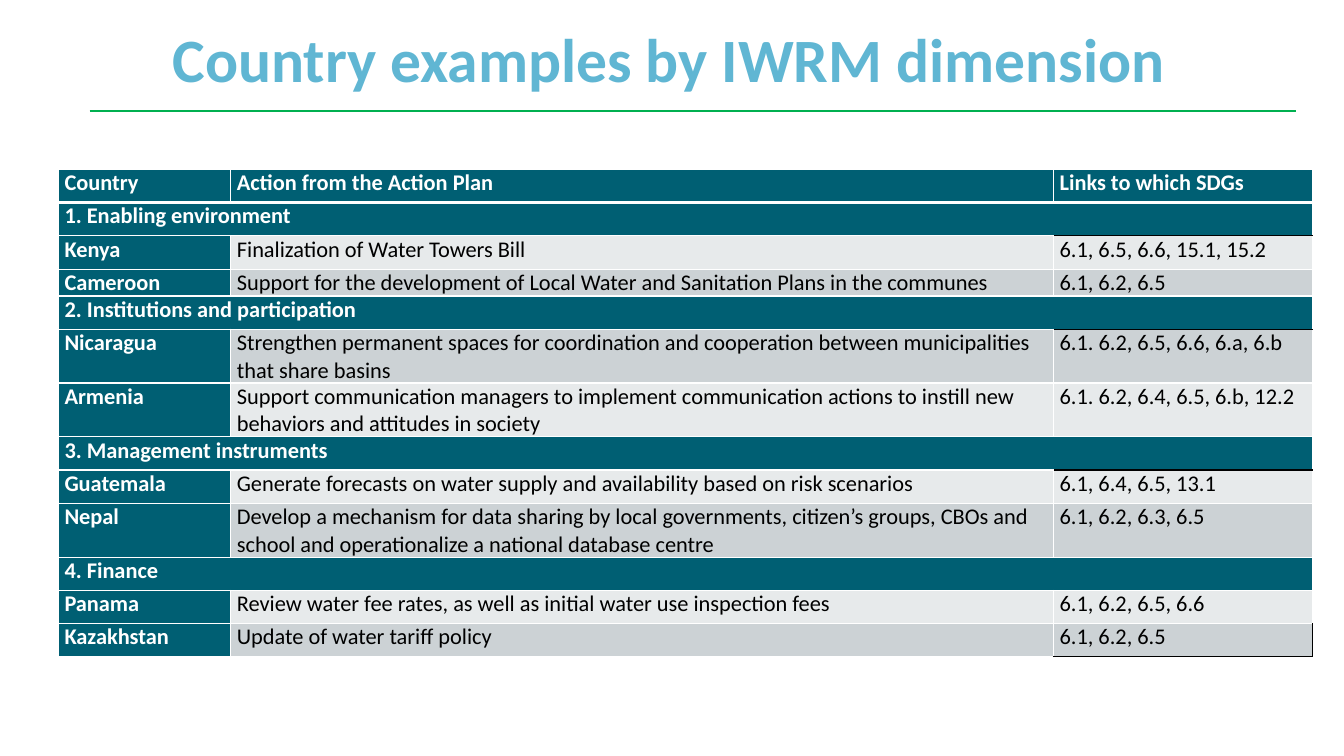
import pptx
import pptx.dml.color
import pptx.enum.shapes
import pptx.enum.text
import pptx.oxml
import pptx.oxml.ns
import pptx.util

Inches = pptx.util.Inches
Pt = pptx.util.Pt

FONT = "Calibri"
COLORS = {
    "title": "60B6D3",
    "rule": "00B050",
    "teal": "005F73",
    "light": "E7EAEB",
    "dark": "CCD2D5",
    "white": "FFFFFF",
    "black": "000000",
}
HEADINGS = ["Country", "Action from the Action Plan", "Links to which SDGs"]
SECTIONS = [
    ("1. Enabling environment\u00a0\u00a0", ("light", "dark"), [
        ("Kenya", "Finalization of Water Towers Bill", "6.1, 6.5, 6.6, 15.1, 15.2"),
        ("Cameroon", "Support for the development of Local Water and Sanitation Plans "
                     "in the communes", "6.1, 6.2, 6.5"),
    ]),
    ("2. Institutions and participation", ("dark", "light"), [
        ("Nicaragua", "Strengthen permanent spaces for coordination and cooperation "
                      "between municipalities that share basins",
         "6.1. 6.2, 6.5, 6.6, 6.a, 6.b"),
        ("Armenia", "Support communication managers to implement communication actions "
                    "to instill new behaviors and attitudes in society",
         "6.1. 6.2, 6.4, 6.5, 6.b, 12.2"),
    ]),
    ("3. Management instruments", ("light", "dark"), [
        ("Guatemala", "Generate forecasts on water supply and availability based on "
                      "risk scenarios", "6.1, 6.4, 6.5, 13.1"),
        ("Nepal", "Develop a mechanism for data sharing by local governments, citizen’s "
                  "groups, CBOs and school and operationalize a national database centre",
         "6.1, 6.2, 6.3, 6.5"),
    ]),
    ("4. Finance", ("light", "dark"), [
        ("Panama", "Review water fee rates, as well as initial water use inspection fees",
         "6.1, 6.2, 6.5, 6.6"),
        ("Kazakhstan", "Update of water tariff policy", "6.1, 6.2, 6.5"),
    ]),
]
COLUMN_WIDTHS = [1.71, 8.16, 2.57]
ROW_HEIGHT = 0.33
TIGHT_ROWS = {"Cameroon"}
BLACK_EDGES = {"Kenya": "T", "Nicaragua": "T", "Guatemala": "T", "Kazakhstan": "RB"}


def rgb(name):
    return pptx.dml.color.RGBColor.from_string(COLORS[name])


def style_font(p, size, color, bold):
    p.font.name = FONT
    p.font.size = Pt(size)
    p.font.bold = bold
    p.font.color.rgb = rgb(color)


def set_borders(cell, widths, black=""):
    tc_pr = cell._tc.get_or_add_tcPr()
    for i, side in enumerate("LRTB"):
        color = COLORS["black" if side in black else "white"]
        tc_pr.insert(i, pptx.oxml.parse_xml(
            f'<a:ln{side} {pptx.oxml.ns.nsdecls("a")} w="{Pt(widths.get(side, 1))}">'
            f'<a:solidFill><a:srgbClr val="{color}"/></a:solidFill></a:ln{side}>'))


def fill_cell(cell, text, fill, color="white", bold=True, widths=None, black=""):
    cell.margin_left = cell.margin_right = Inches(0.06)
    cell.margin_top = cell.margin_bottom = 0
    cell.fill.solid()
    cell.fill.fore_color.rgb = rgb(fill)
    p = cell.text_frame.paragraphs[0]
    p.text = text
    style_font(p, 16, color, bold)
    set_borders(cell, widths or {}, black)


def add_title(slide, left, top, width, height):
    sp = slide.shapes.add_textbox(Inches(left), Inches(top), Inches(width), Inches(height))
    tf = sp.text_frame
    tf.word_wrap = True
    tf.vertical_anchor = pptx.enum.text.MSO_ANCHOR.MIDDLE
    p = tf.paragraphs[0]
    p.text = "Country examples by IWRM dimension"
    p.alignment = pptx.enum.text.PP_ALIGN.CENTER
    p.line_spacing = 0.9
    style_font(p, 44, "title", True)


def add_rule(slide, left, top, width):
    line = slide.shapes.add_connector(
        pptx.enum.shapes.MSO_CONNECTOR.STRAIGHT,
        Inches(left), Inches(top), Inches(left + width), Inches(top))
    line.line.color.rgb = rgb("rule")
    line.line.width = Pt(1.5)
    line._element.spPr.append(
        pptx.oxml.parse_xml(f'<a:effectLst {pptx.oxml.ns.nsdecls("a")}/>'))


def add_country_table(slide, left, top, width, height):
    row_count = 1 + sum(1 + len(countries) for _, _, countries in SECTIONS)
    table = slide.shapes.add_table(
        row_count, len(HEADINGS),
        Inches(left), Inches(top), Inches(width), Inches(height)).table
    table.horz_banding = False
    for column, column_width in zip(table.columns, COLUMN_WIDTHS):
        column.width = Inches(column_width)
    for row in table.rows:
        row.height = Inches(ROW_HEIGHT)

    for c, heading in enumerate(HEADINGS):
        fill_cell(table.cell(0, c), heading, "teal", widths={"B": 3})

    r = 1
    for name, shades, countries in SECTIONS:
        section = table.cell(r, 0)
        section.merge(table.cell(r, len(HEADINGS) - 1))
        fill_cell(section, name, "teal", widths={"T": 3 if r == 1 else 1})
        r += 1
        for shade, (country, action, links) in zip(shades, countries):
            if country in TIGHT_ROWS:
                table.rows[r].height = 0
            fill_cell(table.cell(r, 0), country, "teal")
            fill_cell(table.cell(r, 1), action, shade, "black", False)
            fill_cell(table.cell(r, 2), links, shade, "black", False,
                      black=BLACK_EDGES.get(country, ""))
            r += 1


def main():
    prs = pptx.Presentation()
    prs.slide_width = Inches(13.33)
    prs.slide_height = Inches(7.5)
    slide = prs.slides.add_slide(prs.slide_layouts[6])
    add_title(slide, 0.27, 0, 12.74, 1.24)
    add_country_table(slide, 0.58, 1.68, 12.43, 4.81)
    add_rule(slide, 0.89, 1.1, 11.96)
    prs.save("out.pptx")


if __name__ == "__main__":
    main()
